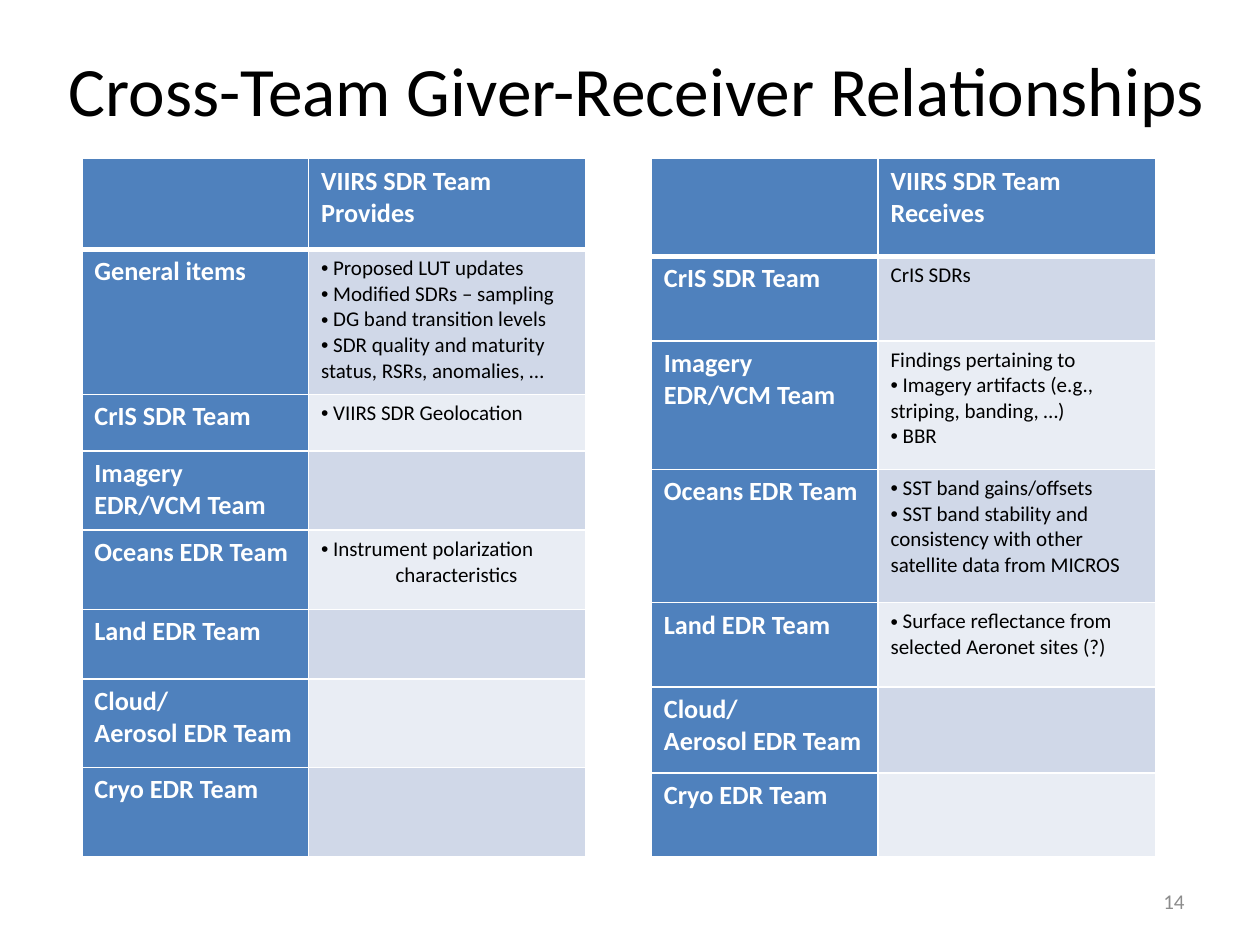
import pptx
import pptx.util
import pptx.dml.color
import pptx.enum.text
import pptx.oxml.ns
from lxml import etree

Cm, Pt = pptx.util.Cm, pptx.util.Pt
RGBColor = pptx.dml.color.RGBColor
ALIGN = pptx.enum.text.PP_ALIGN
MIDDLE = pptx.enum.text.MSO_ANCHOR.MIDDLE
qn = pptx.oxml.ns.qn

BLACK = RGBColor(0x00, 0x00, 0x00)
WHITE = RGBColor(0xFF, 0xFF, 0xFF)
GRAY = RGBColor(0x8C, 0x8C, 0x8C)
BLUE = RGBColor(0x4F, 0x81, 0xBD)
BANDS = [RGBColor(0xD0, 0xD8, 0xE8), RGBColor(0xE9, 0xED, 0xF4)]

TITLE = "Cross-Team Giver-Receiver Relationships"
PAGE_NUMBER = "14"
BULLET, PLAIN, INDENTED = "bullet", "plain", "indented"

PROVIDES = {
    "left": 1.65,
    "heading": "VIIRS SDR Team Provides",
    "heights": [1.83, 2.92, 1.14, 1.6, 1.6, 1.4, 1.78, 1.8],
    "teams": [
        (["General items"], [
            (BULLET, "Proposed LUT updates"),
            (BULLET, "Modified SDRs – sampling"),
            (BULLET, "DG band transition levels"),
            (BULLET, "SDR quality and maturity status, RSRs, anomalies, …"),
        ]),
        (["CrIS SDR Team"], [(BULLET, "VIIRS SDR Geolocation")]),
        (["Imagery EDR/VCM Team"], []),
        (["Oceans EDR Team"], [
            (BULLET, "Instrument polarization"),
            (INDENTED, "characteristics"),
        ]),
        (["Land EDR Team"], []),
        (["Cloud/", "Aerosol EDR Team"], []),
        (["Cryo EDR Team"], []),
    ],
}
RECEIVES = {
    "left": 13.13,
    "heading": "VIIRS SDR Team Receives",
    "heights": [1.97, 1.7, 2.59, 2.69, 1.7, 1.73, 1.7],
    "teams": [
        (["CrIS SDR Team"], [(PLAIN, "CrIS SDRs")]),
        (["Imagery EDR/VCM Team"], [
            (PLAIN, "Findings pertaining to"),
            (BULLET, "Imagery artifacts (e.g., striping, banding, …)"),
            (BULLET, "BBR"),
        ]),
        (["Oceans EDR Team"], [
            (BULLET, "SST band gains/offsets"),
            (BULLET, "SST band stability and consistency with other "
                     "satellite data from MICROS"),
        ]),
        (["Land EDR Team"], [
            (BULLET, "Surface reflectance from selected Aeronet sites (?)"),
        ]),
        (["Cloud/", "Aerosol EDR Team"], []),
        (["Cryo EDR Team"], []),
    ],
}
TABLE_TOP = 3.2
COLUMN_WIDTHS = [4.57, 5.59]


def write(frame, items, size, color, bold=False, align=ALIGN.LEFT):
    for index, (kind, text) in enumerate(items):
        paragraph = frame.paragraphs[0] if index == 0 else frame.add_paragraph()
        paragraph.alignment = align
        run = paragraph.add_run()
        run.text = text
        run.font.name = "Calibri"
        run.font.size = Pt(size)
        run.font.bold = bold
        run.font.color.rgb = color
        properties = paragraph._p.get_or_add_pPr()
        if kind == BULLET:
            run.text = " " + text
            properties.set("marL", "0")
            properties.set("indent", "0")
            etree.SubElement(properties, qn("a:buFont")).set("typeface", "Arial")
            etree.SubElement(properties, qn("a:buChar")).set("char", "•")
        elif kind == INDENTED:
            properties.set("marL", str(Cm(1.5)))


def add_text(slide, text, left, top, width, height, **format):
    frame = slide.shapes.add_textbox(
        Cm(left), Cm(top), Cm(width), Cm(height)).text_frame
    frame.word_wrap = True
    frame.vertical_anchor = MIDDLE
    write(frame, [(PLAIN, text)], **format)


def style_cell(cell, fill, row):
    widths = {"a:lnL": 1, "a:lnR": 1,
              "a:lnT": 3 if row == 1 else 1, "a:lnB": 3 if row == 0 else 1}
    for side, width in widths.items():
        line = etree.SubElement(cell._tc.get_or_add_tcPr(), qn(side))
        line.set("w", str(Pt(width)))
        solid = etree.SubElement(line, qn("a:solidFill"))
        etree.SubElement(solid, qn("a:srgbClr")).set("val", str(WHITE))
    cell.fill.solid()
    cell.fill.fore_color.rgb = fill


def add_team_table(slide, content):
    heights = content["heights"]
    table = slide.shapes.add_table(
        len(heights), len(COLUMN_WIDTHS), Cm(content["left"]), Cm(TABLE_TOP),
        Cm(sum(COLUMN_WIDTHS)), Cm(sum(heights))).table
    for column, width in zip(table.columns, COLUMN_WIDTHS):
        column.width = Cm(width)
    for row, height in zip(table.rows, heights):
        row.height = Cm(height)

    for cell in table.rows[0].cells:
        style_cell(cell, BLUE, 0)
    write(table.cell(0, 1).text_frame, [(PLAIN, content["heading"])],
          size=15, color=WHITE, bold=True)

    for row, (team, items) in enumerate(content["teams"], start=1):
        team_cell, items_cell = table.rows[row].cells
        style_cell(team_cell, BLUE, row)
        style_cell(items_cell, BANDS[(row - 1) % 2], row)
        write(team_cell.text_frame, [(PLAIN, line) for line in team],
              size=15, color=WHITE, bold=True)
        write(items_cell.text_frame, items, size=12, color=BLACK)


def main():
    presentation = pptx.Presentation()
    presentation.slide_width, presentation.slide_height = Cm(25.4), Cm(19.05)
    slide = presentation.slides.add_slide(presentation.slide_layouts[6])
    add_text(slide, TITLE, 0.79, 0.76, 24.08, 2.08,
             size=39.6, color=BLACK, align=ALIGN.CENTER)
    add_text(slide, PAGE_NUMBER, 18.21, 17.65, 5.92, 1.02,
             size=12, color=GRAY, align=ALIGN.RIGHT)
    for content in (PROVIDES, RECEIVES):
        add_team_table(slide, content)
    presentation.save("out.pptx")


if __name__ == "__main__":
    main()
